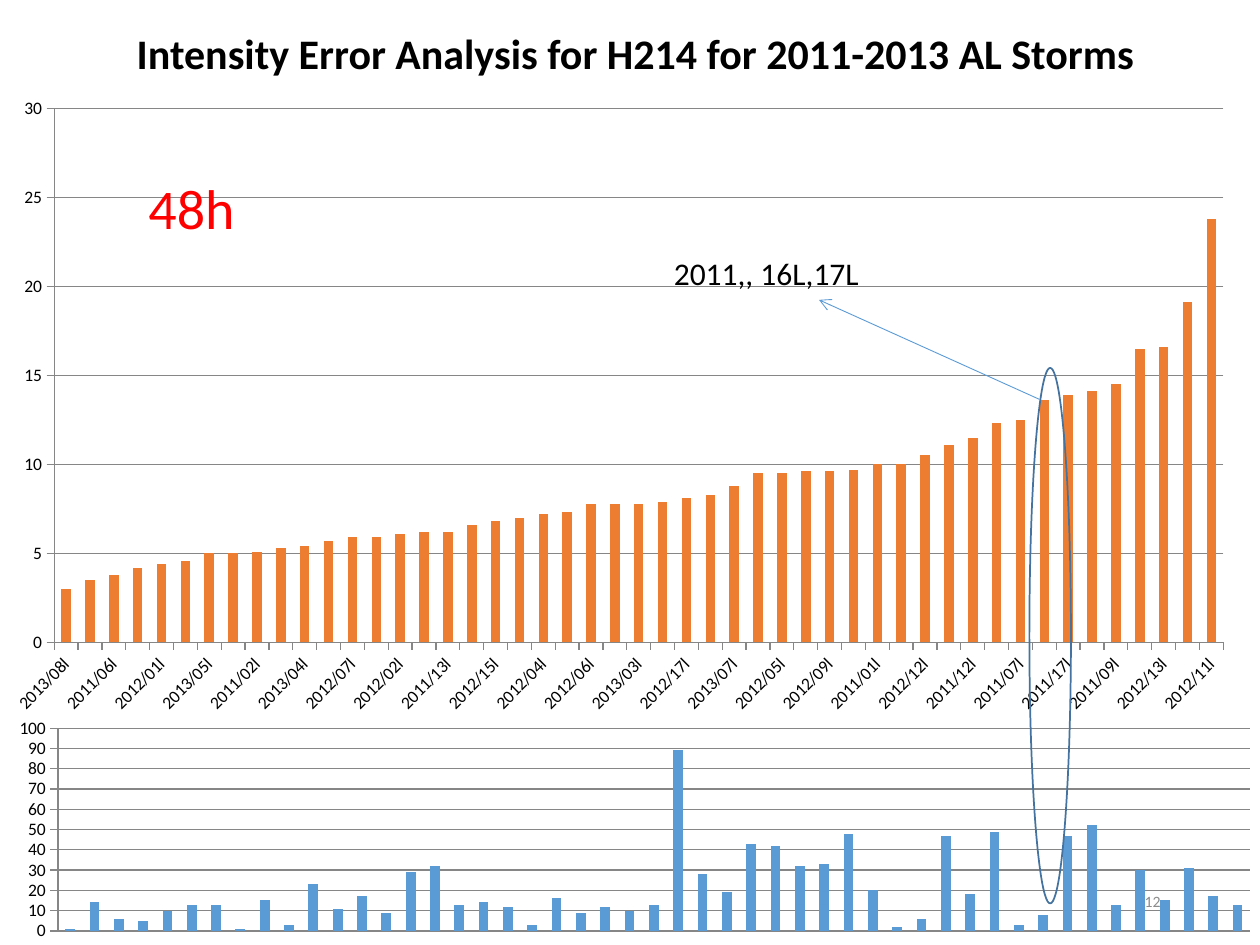
from lxml import etree
from pptx import Presentation
from pptx.chart.data import CategoryChartData
from pptx.dml.color import RGBColor
from pptx.enum.chart import XL_CHART_TYPE, XL_TICK_MARK
from pptx.enum.shapes import MSO_CONNECTOR, MSO_SHAPE
from pptx.enum.text import MSO_ANCHOR, PP_ALIGN
from pptx.oxml.ns import qn
from pptx.util import Inches, Pt

COLUMN = XL_CHART_TYPE.COLUMN_CLUSTERED
OUTSIDE, NO_TICK = XL_TICK_MARK.OUTSIDE, XL_TICK_MARK.NONE
STRAIGHT, OVAL = MSO_CONNECTOR.STRAIGHT, MSO_SHAPE.OVAL
TOP, MIDDLE = MSO_ANCHOR.TOP, MSO_ANCHOR.MIDDLE
LEFT, CENTER, RIGHT = PP_ALIGN.LEFT, PP_ALIGN.CENTER, PP_ALIGN.RIGHT

FONT = "Calibri"
TITLE = "Intensity Error Analysis for H214 for 2011-2013 AL Storms"
STORMS = """
2013/08l 2013/14l 2011/06l 2013/02l 2012/01l 2013/13l 2013/05l 2013/06l 2011/02l 2011/03l
2013/04l 2011/05l 2012/07l 2012/10l 2012/02l 2011/14l 2011/13l 2013/11l 2012/15l 2011/04l
2012/04l 2013/01l 2012/06l 2011/15l 2013/03l 2012/14l 2012/17l 2013/12l 2013/07l 2013/09l
2012/05l 2012/18l 2012/09l 2012/08l 2011/01l 2011/08l 2012/12l 2012/03l 2011/12l 2012/16l
2011/07l 2011/16l 2011/17l 2012/19l 2011/09l 2011/18l 2012/13l 2013/10l 2012/11l
""".split()
ERRORS = [3, 3.5, 3.8, 4.2, 4.4, 4.6, 5, 5, 5.1, 5.3, 5.4, 5.7, 5.9, 5.9, 6.1, 6.2, 6.2,
          6.6, 6.8, 7, 7.2, 7.3, 7.8, 7.8, 7.8, 7.9, 8.1, 8.3, 8.8, 9.5, 9.5, 9.6, 9.6,
          9.7, 10, 10, 10.5, 11.1, 11.5, 12.3, 12.5, 13.6, 13.9, 14.1, 14.5, 16.5, 16.6,
          19.1, 23.8]
CASES = [1, 14, 6, 5, 10, 13, 13, 1, 15, 3, 23, 11, 17, 9, 29, 32, 13, 14, 12, 3, 16, 9,
         12, 10, 13, 89, 28, 19, 43, 42, 32, 33, 48, 20, 2, 6, 47, 18, 49, 3, 8, 47, 52,
         13, 30, 15, 31, 17, 13]
CASE_CHART = {
    "box": (-0.04, 5.67, 10.17, 1.83), "plot": (0.46, 5.78, 9.46, 1.61),
    "categories": [str(number + 1) for number in range(len(CASES))], "values": CASES,
    "color": "5B9BD5", "maximum": 100, "step": 10, "labelled": False}
ERROR_CHART = {
    "box": (-0.08, 0.68, 10, 5.08), "plot": (0.43, 0.86, 9.28, 4.24),
    "categories": STORMS, "values": ERRORS,
    "color": "ED7D31", "maximum": 30, "step": 5, "labelled": True}
TITLE_BOX = (0.42, 0.17, 9.25, 0.5)
TITLE_FORMAT = {"size": Pt(24), "bold": True}
LABELS = [
    ("48h", (1.08, 1.33, 1.25, 0.64), "FF0000", 32, LEFT, TOP),
    ("2011,, 16L,17L", (5.25, 1.97, 2.5, 0.4), "000000", 18, LEFT, TOP),
    ("12", (7.06, 6.95, 2.25, 0.4), "8C8C8C", 9, RIGHT, MIDDLE),
]
STORM_RING = (8.17, 2.92, 0.33, 4.25)
ARROW = (8.25, 3.17, 6.5, 2.38)


def inches(values):
    """Convert a sequence of numbers to lengths."""
    return [Inches(value) for value in values]


def paint(target, color):
    """Give a fill, line or font a solid colour."""
    if hasattr(target, "solid"):
        target.solid()
        target = target.fore_color
    else:
        target = target.color
    target.rgb = RGBColor.from_string(color)


def set_all(target, values):
    """Set attributes from a dict."""
    for name, value in values.items():
        setattr(target, name, value)


def write(shape, text, color, alignment, anchor, font_format):
    """Put one formatted line of text into a shape."""
    frame = shape.text_frame
    set_all(frame, {"word_wrap": True, "vertical_anchor": anchor})
    paragraph = frame.paragraphs[0]
    paragraph.alignment = alignment
    run = paragraph.add_run()
    run.text = text
    set_all(run.font, {"name": FONT, **font_format})
    paint(run.font, color)


def place_plot(chart, box, plot):
    """Fix the inner plot area at a rectangle on the slide."""
    area = chart._chartSpace.chart.plotArea
    for old in area.findall(qn("c:layout")):
        area.remove(old)
    layout = etree.Element(qn("c:layout"))
    manual = etree.SubElement(layout, qn("c:manualLayout"))
    left, top, width, height = box
    settings = {"layoutTarget": "inner", "xMode": "edge", "yMode": "edge",
                "x": (plot[0] - left) / width, "y": (plot[1] - top) / height,
                "w": plot[2] / width, "h": plot[3] / height}
    for name, value in settings.items():
        etree.SubElement(manual, qn(f"c:{name}")).set("val", str(value))
    area.insert(0, layout)


def slant_labels(axis):
    """Turn the category labels by 45 degrees and show every second one."""
    axis.tick_labels.font.size = Pt(10)
    element = axis._element
    element.find(qn("c:txPr")).find(qn("a:bodyPr")).set("rot", "-2700000")
    skip = etree.Element(qn("c:tickLblSkip"))
    skip.set("val", "2")
    element.find(qn("c:noMultiLvlLbl")).addprevious(skip)


def add_columns(slide, box, plot, categories, values, color, maximum, step, labelled):
    """Add a one-series column chart."""
    data = CategoryChartData()
    data.categories = categories
    data.add_series("Series 1", values)
    chart = slide.shapes.add_chart(COLUMN, *inches(box), data).chart
    set_all(chart, {"has_legend": False, "has_title": False})
    set_all(chart.font, {"name": FONT, "size": Pt(10)})
    paint(chart.font, "000000")
    set_all(chart.plots[0], {"gap_width": 150, "vary_by_categories": False})
    paint(chart.plots[0].series[0].format.fill, color)
    category_axis, value_axis = chart.category_axis, chart.value_axis
    set_all(value_axis, {"minimum_scale": 0, "maximum_scale": maximum, "major_unit": step,
                         "has_major_gridlines": True})
    for axis in (category_axis, value_axis):
        set_all(axis, {"major_tick_mark": OUTSIDE, "minor_tick_mark": NO_TICK})
    for line in (category_axis.format.line, value_axis.format.line,
                 value_axis.major_gridlines.format.line):
        paint(line, "868686")
        line.width = Pt(0.75)
    category_axis.visible = labelled
    if labelled:
        slant_labels(category_axis)
    place_plot(chart, box, plot)


def add_arrow(slide, ends):
    """Add a thin line with an open arrowhead at its end."""
    connector = slide.shapes.add_connector(STRAIGHT, *inches(ends))
    paint(connector.line, "5B9BD5")
    connector.line.width = Pt(0.5)
    etree.SubElement(connector.line._get_or_add_ln(), qn("a:tailEnd")).set("type", "arrow")
    etree.SubElement(connector._element.spPr, qn("a:effectLst"))


def main():
    """Build the slide and save it."""
    presentation = Presentation()
    set_all(presentation, {"slide_width": Inches(10), "slide_height": Inches(7.5)})
    slide = presentation.slides.add_slide(presentation.slide_layouts[5])
    add_columns(slide, **CASE_CHART)
    title = slide.shapes.title
    set_all(title, dict(zip(("left", "top", "width", "height"), inches(TITLE_BOX))))
    write(title, TITLE, "000000", CENTER, TOP, TITLE_FORMAT)
    add_columns(slide, **ERROR_CHART)
    for text, box, color, size, alignment, anchor in LABELS:
        label = slide.shapes.add_textbox(*inches(box))
        write(label, text, color, alignment, anchor, {"size": Pt(size)})
    ring = slide.shapes.add_shape(OVAL, *inches(STORM_RING))
    ring.shadow.inherit = False
    ring.fill.background()
    paint(ring.line, "43739E")
    ring.line.width = Pt(1)
    add_arrow(slide, ARROW)
    presentation.save("out.pptx")


if __name__ == "__main__":
    main()
